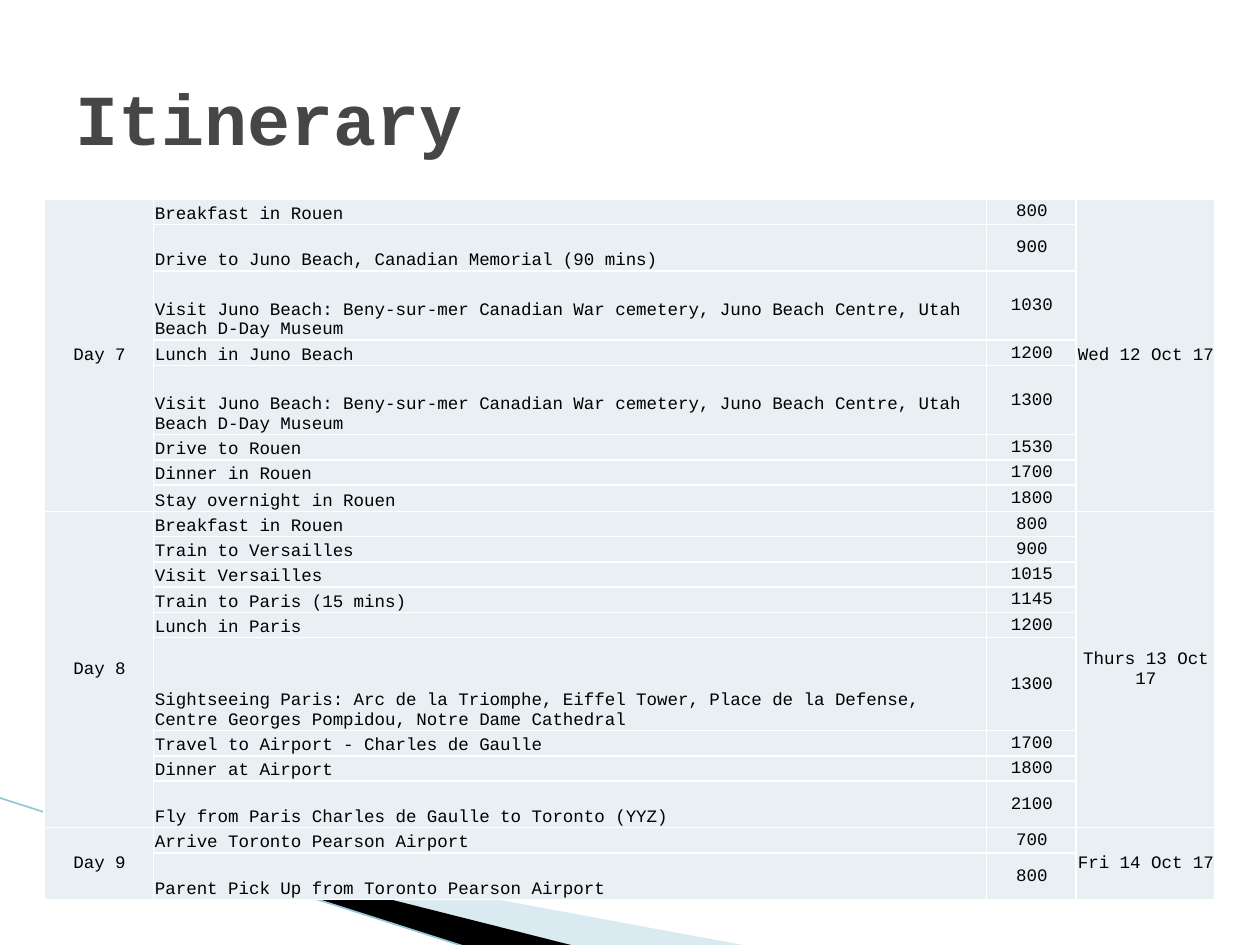
from lxml import etree
from pptx import Presentation
from pptx import util as u
from pptx.dml.color import RGBColor
from pptx.enum import shapes, text
from pptx.oxml.ns import qn

COLORS = {"title": "464646", "ink": "000000", "cell": "E8F0F4", "border": "FFFFFF",
          "pale": "A0CBDC", "dark": "000000", "rule": "97C5D8"}
FONT = "Courier New"
COLUMNS = [0.87, 6.61, 0.71, 1.1]
JUNO = ("Visit Juno Beach: Beny-sur-mer Canadian War cemetery, "
        "Juno Beach Centre, Utah Beach D-Day Museum")
DAYS = [
    ("Day 7", "Wed 12 Oct 17", [
        ("Breakfast in Rouen", "800", 0.2),
        ("Drive to Juno Beach, Canadian Memorial (90 mins)", "900", 0.37),
        (JUNO, "1030", 0.55),
        ("Lunch in Juno Beach", "1200", 0.2),
        (JUNO, "1300", 0.55),
        ("Drive to Rouen", "1530", 0.2),
        ("Dinner in Rouen", "1700", 0.2),
        ("Stay overnight in Rouen", "1800", 0.21),
    ]),
    ("Day 8", "Thurs 13 Oct 17", [
        ("Breakfast in Rouen", "800", 0.2),
        ("Train to Versailles", "900", 0.2),
        ("Visit Versailles", "1015", 0.2),
        ("Train to Paris (15 mins)", "1145", 0.2),
        ("Lunch in Paris", "1200", 0.2),
        ("Sightseeing Paris: Arc de la Triomphe, Eiffel Tower, Place de la Defense, "
         "Centre Georges Pompidou, Notre Dame Cathedral", "1300", 0.74),
        ("Travel to Airport - Charles de Gaulle", "1700", 0.2),
        ("Dinner at Airport", "1800", 0.2),
        ("Fly from Paris Charles de Gaulle to Toronto (YYZ)", "2100", 0.37),
    ]),
    ("Day 9", "Fri 14 Oct 17", [
        ("Arrive Toronto Pearson Airport", "700", 0.2),
        ("Parent Pick Up from Toronto Pearson Airport", "800", 0.37),
    ]),
]


def rgb(name):
    return RGBColor.from_string(COLORS[name])


def write(frame, words, size=10, color="ink", bold=False, align=text.PP_ALIGN.LEFT):
    frame.word_wrap = True
    para = frame.paragraphs[0]
    para.alignment = align
    span = para.add_run()
    span.text = words
    span.font.name = FONT
    span.font.size = u.Pt(size)
    span.font.bold = bold
    span.font.color.rgb = rgb(color)


def add_wedge(page, points, color, opacity=100):
    corners = [(u.Inches(x), u.Inches(y)) for x, y in points]
    builder = page.shapes.build_freeform(*corners[0], scale=1.0)
    builder.add_line_segments(corners[1:], close=True)
    wedge = builder.convert_to_shape()
    wedge.shadow.inherit = False
    wedge.line.fill.background()
    wedge.fill.solid()
    wedge.fill.fore_color.rgb = rgb(color)
    if opacity < 100:
        tint = next(wedge.element.spPr.iter(qn("a:srgbClr")))
        etree.SubElement(tint, qn("a:alpha"), val=str(opacity * 1000))


def add_rule(page, start, end, color, width):
    ends = [u.Inches(value) for value in (*start, *end)]
    rule = page.shapes.add_connector(shapes.MSO_CONNECTOR.STRAIGHT, *ends)
    rule.line.color.rgb = rgb(color)
    rule.line.width = u.Pt(width)
    etree.SubElement(rule.element.spPr, qn("a:effectLst"))


def style_cell(cell, anchor):
    cell.vertical_anchor = anchor
    cell.margin_left = cell.margin_top = u.Inches(0.01)
    cell.margin_right = cell.margin_bottom = 0
    properties = cell._tc.get_or_add_tcPr()
    for side in ("a:lnL", "a:lnR", "a:lnT", "a:lnB"):
        border = etree.SubElement(properties, qn(side), w=str(u.Pt(1)))
        paint = etree.SubElement(border, qn("a:solidFill"))
        etree.SubElement(paint, qn("a:srgbClr"), val=COLORS["border"])
    cell.fill.solid()
    cell.fill.fore_color.rgb = rgb("cell")


def add_itinerary(page):
    stops = [stop for _, _, day_stops in DAYS for stop in day_stops]
    height = sum(stop[2] for stop in stops)
    table = page.shapes.add_table(
        len(stops), len(COLUMNS), u.Inches(0.35), u.Inches(1.58),
        u.Inches(sum(COLUMNS)), u.Inches(height)).table
    table.first_row = table.horz_banding = False
    for column, width in zip(table.columns, COLUMNS):
        column.width = u.Inches(width)
    for row, (activity, time, row_height) in enumerate(stops):
        table.rows[row].height = u.Inches(row_height)
        for column in range(len(COLUMNS)):
            anchor = text.MSO_ANCHOR.BOTTOM if column == 1 else text.MSO_ANCHOR.MIDDLE
            style_cell(table.cell(row, column), anchor)
        write(table.cell(row, 1).text_frame, activity)
        write(table.cell(row, 2).text_frame, time, align=text.PP_ALIGN.CENTER)
    first = 0
    for day, date, day_stops in DAYS:
        last = first + len(day_stops) - 1
        for column, words in ((0, day), (3, date)):
            table.cell(first, column).merge(table.cell(last, column))
            write(table.cell(first, column).text_frame, words, align=text.PP_ALIGN.CENTER)
        first = last + 1


def add_title(page, words):
    box = page.shapes.add_textbox(u.Inches(0.5), u.Inches(0.3), u.Inches(9), u.Inches(1.25))
    box.text_frame.vertical_anchor = text.MSO_ANCHOR.MIDDLE
    write(box.text_frame, words, size=41, color="title", bold=True)


def main():
    deck = Presentation()
    deck.slide_width, deck.slide_height = u.Inches(10), u.Inches(7.5)
    page = deck.slides.add_slide(deck.slide_layouts[6])
    add_wedge(page, [(0.55, 6.51), (5.95, 7.51), (4.56, 7.51), (0.55, 6.5)], "pale", opacity=40)
    add_wedge(page, [(0.53, 6.49), (4.57, 7.51), (3.72, 7.52), (0.54, 6.5)], "dark")
    add_rule(page, (-0.01, 6.33), (3.71, 7.52), "rule", 0.95)
    add_itinerary(page)
    add_title(page, "Itinerary")
    deck.save("out.pptx")


if __name__ == "__main__":
    main()
